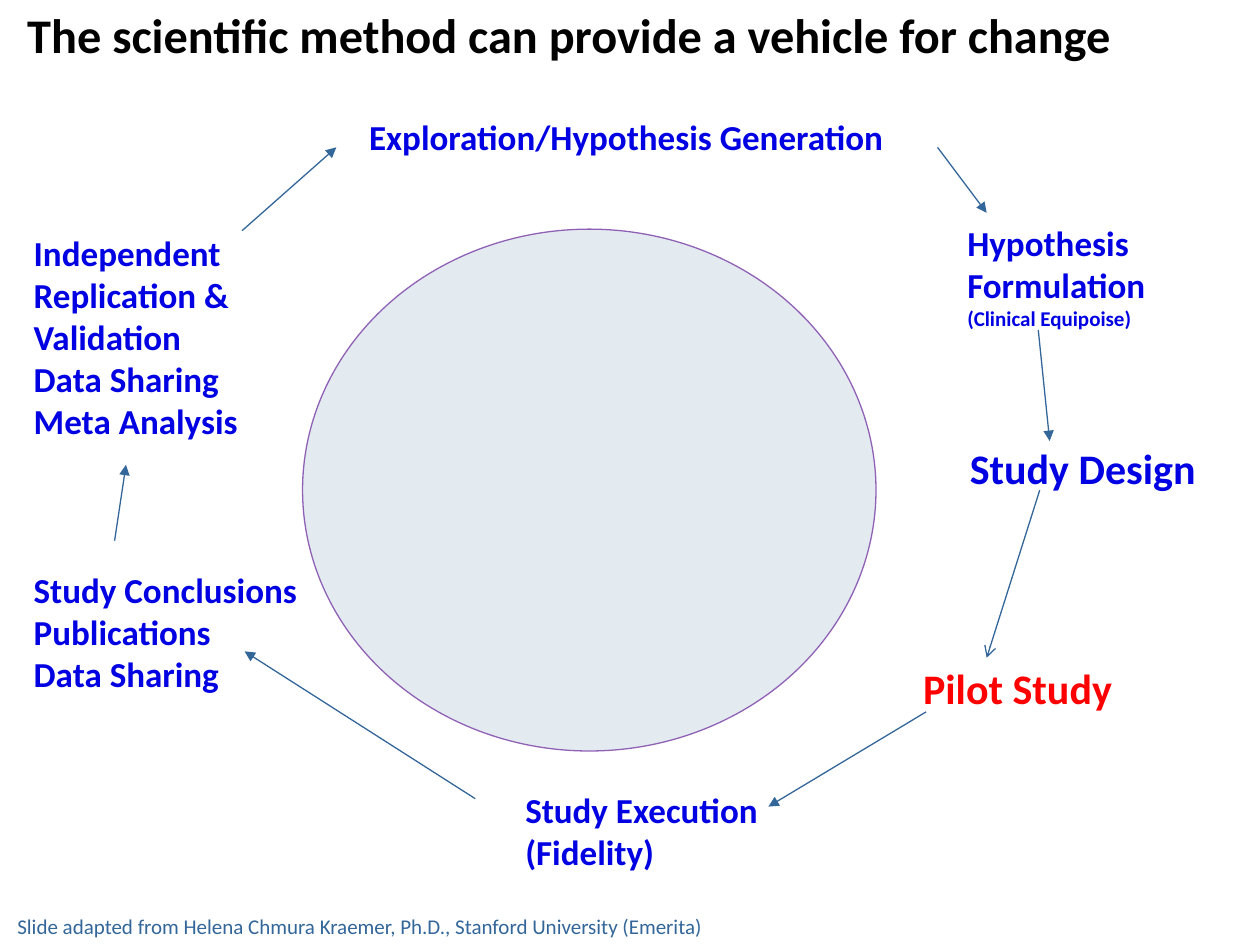
from lxml import etree
from pptx import Presentation
from pptx.dml.color import RGBColor
from pptx.enum.shapes import MSO_CONNECTOR, MSO_SHAPE
from pptx.enum.text import MSO_ANCHOR
from pptx.oxml.ns import qn
from pptx.util import Cm, Pt

STRAIGHT = MSO_CONNECTOR.STRAIGHT
ELLIPSE = MSO_SHAPE.OVAL
TOP = MSO_ANCHOR.TOP

BLUE = RGBColor(0x00, 0x00, 0xE2)
RED = RGBColor(0xFF, 0x00, 0x00)
BLACK = RGBColor(0x00, 0x00, 0x00)
STEEL = RGBColor(0x33, 0x66, 0x99)
PURPLE = RGBColor(0x70, 0x30, 0xA0)
PALE = RGBColor(0xE3, 0xEB, 0xF1)
FONT = "Calibri"

TITLE = "The scientific method can provide a vehicle for change"
CREDIT = "Slide adapted from Helena Chmura Kraemer, Ph.D., Stanford University (Emerita)"

STAGES = [
    ((7.19, 2.21, 11.18, 1.12), BLUE, [("Exploration/Hypothesis Generation", 20)]),
    ((19.25, 4.34, 5.72, 2.49), BLUE,
     [("Hypothesis", 20), ("Formulation", 20), ("(Clinical Equipoise)", 12)]),
    ((19.3, 8.79, 5.66, 1.27), BLUE, [("Study Design", 24)]),
    ((18.36, 13.23, 4.55, 1.27), RED, [("Pilot Study", 24)]),
    ((10.34, 15.77, 5.26, 1.96), BLUE, [("Study Execution", 20), ("(Fidelity)", 20)]),
    ((0.43, 11.33, 6.35, 2.82), BLUE,
     [("Study Conclusions", 20), ("Publications", 20), ("Data Sharing", 20)]),
    ((0.43, 4.55, 5.82, 4.52), BLUE,
     [("Independent", 20), ("Replication &", 20), ("Validation", 20),
      ("Data Sharing", 20), ("Meta Analysis", 20)]),
]

ARROWS = [
    ((18.9, 2.97), (19.89, 4.29), "triangle"),
    ((20.93, 6.65), (21.16, 8.89), "triangle"),
    ((20.96, 9.88), (19.89, 13.26), "arrow"),
    ((18.67, 14.35), (15.49, 16.26), "triangle"),
    ((9.58, 16.1), (4.93, 13.13), "triangle"),
    ((2.31, 10.9), (2.54, 9.37), "triangle"),
    ((4.88, 4.65), (6.78, 2.97), "triangle"),
]


def lengths(values):
    return [Cm(value) for value in values]


def add_text(slide, box, lines, color, bold=True):
    text_frame = slide.shapes.add_textbox(*lengths(box)).text_frame
    text_frame.word_wrap = True
    text_frame.vertical_anchor = TOP
    text_frame.text = "\n".join(text for text, size in lines)
    for paragraph, (text, size) in zip(text_frame.paragraphs, lines):
        font = paragraph.runs[0].font
        font.name = FONT
        font.size = Pt(size)
        font.bold = bold
        font.color.rgb = color
    return text_frame


def add_cycle(slide):
    cycle = slide.shapes.add_shape(ELLIPSE, *lengths((6.1, 4.62, 11.56, 10.52)))
    cycle.shadow.inherit = False
    cycle.fill.solid()
    cycle.fill.fore_color.rgb = PALE
    cycle.line.color.rgb = PURPLE
    cycle.line.width = Pt(0.75)
    line_color = cycle.line._get_or_add_ln().find(".//" + qn("a:srgbClr"))
    etree.SubElement(line_color, qn("a:alpha"), val="75000")


def add_arrow(slide, start, end, head):
    arrow = slide.shapes.add_connector(STRAIGHT, *lengths(start + end))
    arrow.line.color.rgb = STEEL
    arrow.line.width = Pt(0.75)
    etree.SubElement(arrow.line._get_or_add_ln(), qn("a:tailEnd"), type=head)
    etree.SubElement(arrow._element.spPr, qn("a:effectLst"))


def main():
    presentation = Presentation()
    presentation.slide_width = Cm(25.4)
    presentation.slide_height = Cm(19.05)
    slide = presentation.slides.add_slide(presentation.slide_layouts[6])

    add_cycle(slide)
    for box, color, lines in STAGES:
        add_text(slide, box, lines, color)
    for start, end, head in ARROWS:
        add_arrow(slide, start, end, head)
    add_text(slide, (0.1, 18.29, 19.05, 0.76), [(CREDIT, 12)], STEEL, bold=False)
    title = add_text(slide, (0.3, 0.1, 25.27, 1.88), [(TITLE, 27.6)], BLACK)
    title.margin_top = 0

    presentation.save("out.pptx")


if __name__ == "__main__":
    main()
